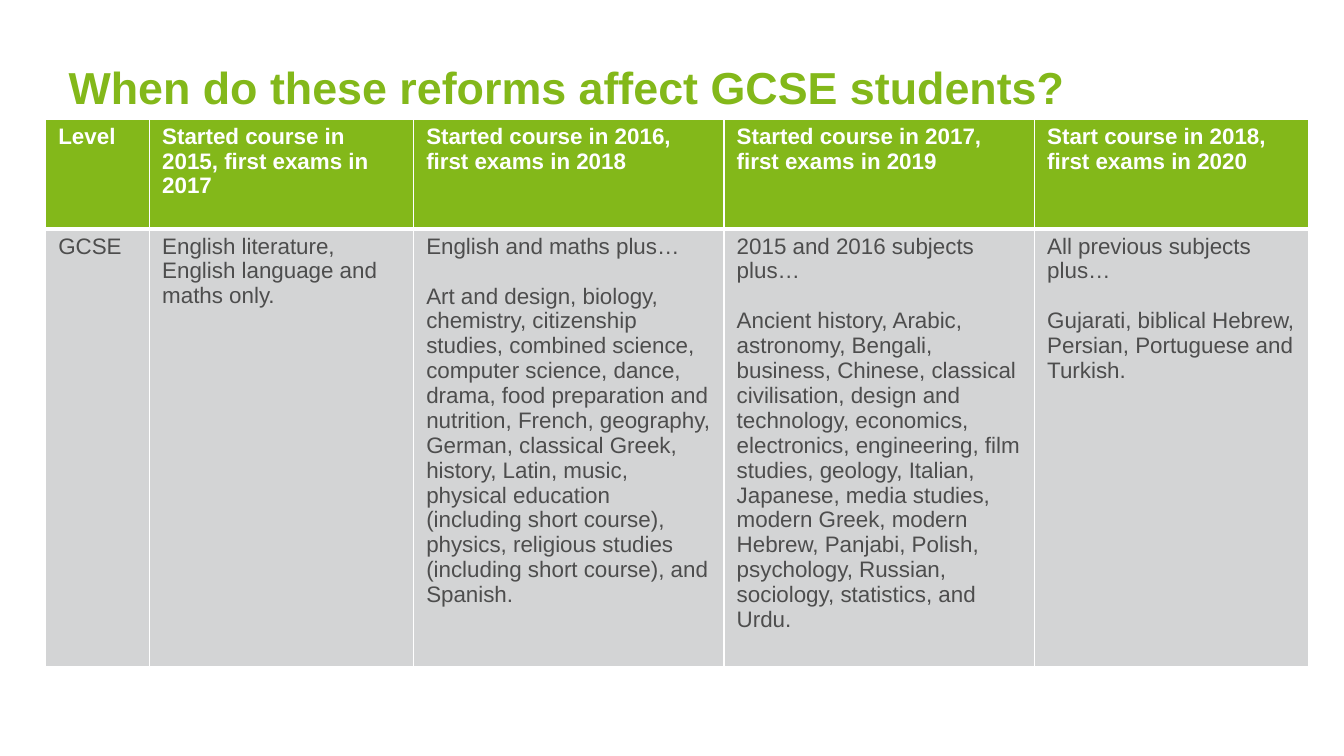
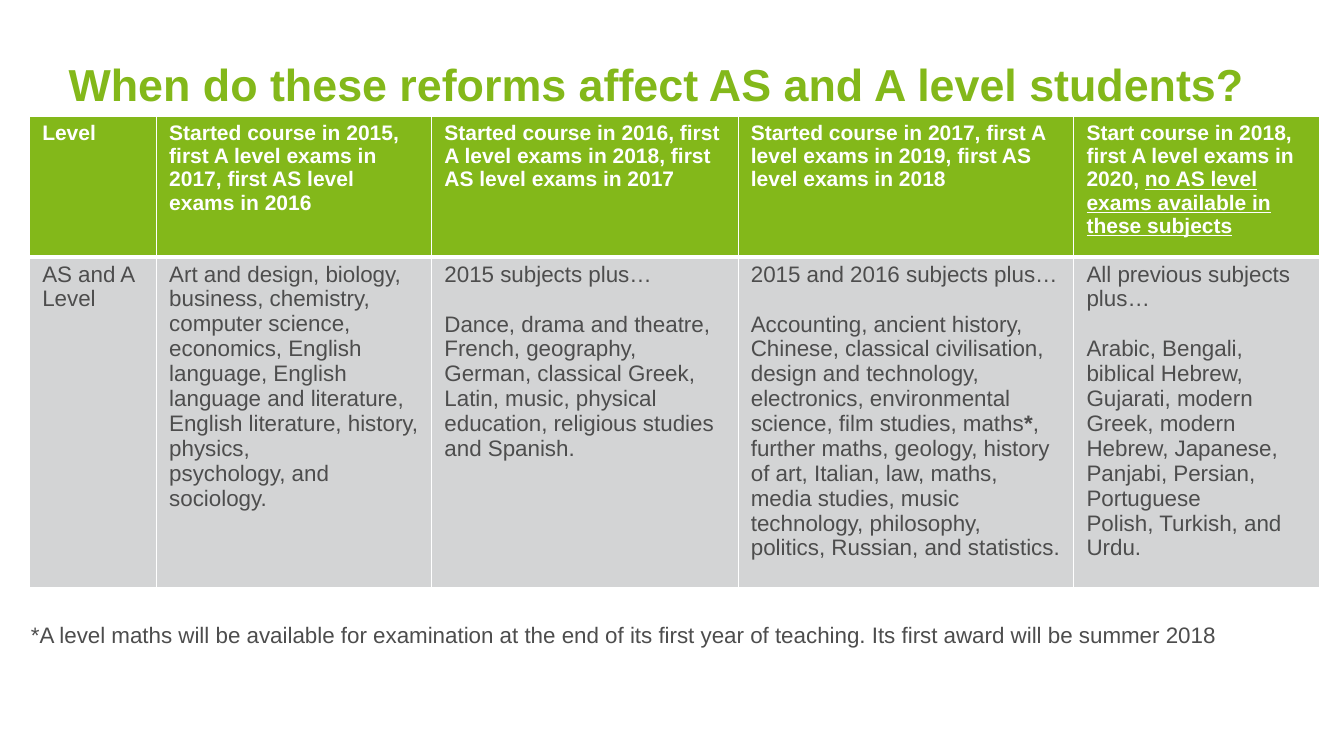
from dataclasses import dataclass

from lxml import etree
from pptx import Presentation
from pptx.dml.color import RGBColor
from pptx.enum import text
from pptx.oxml import ns
from pptx.util import Pt

COLOURS = {"green": "83B81A", "grey": "D3D4D5", "ink": "4D4D4D", "white": "FFFFFF"}
FONT = "Arial"
BODY_SIZE = 16
INTRO_GAP = 17.9  # one line between an introduction and its subjects
THIN, THICK = 1, 3


@dataclass
class Span:
    text: str
    bold: bool = False
    underline: bool = False


@dataclass
class Para:
    spans: list
    before: float = 0


def plain(*lines):
    return [Para([Span(line)]) for line in lines]


def with_intro(intro, *paras):
    first, *rest = paras
    return [*plain(intro), Para(first.spans, INTRO_GAP), *rest]


def colour(name):
    return RGBColor.from_string(COLOURS[name])


def write(frame, paras, size, ink, bold=False):
    """Fill a text frame with styled paragraphs."""
    frame.word_wrap = True
    for index, content in enumerate(paras):
        para = frame.add_paragraph() if index else frame.paragraphs[0]
        if content.before:
            para.space_before = Pt(content.before)
        for span in content.spans:
            run = para.add_run()
            run.text = span.text
            run.font.name = FONT
            run.font.size = Pt(size)
            run.font.bold = bold or span.bold
            run.font.underline = span.underline
            run.font.color.rgb = colour(ink)


def set_margins(target, side, edge):
    target.margin_left = target.margin_right = Pt(side)
    target.margin_top = target.margin_bottom = Pt(edge)


def add_text(page, left, top, width, height, content, size, ink, bold=False):
    box = page.shapes.add_textbox(Pt(left), Pt(top), Pt(width), Pt(height))
    write(box.text_frame, plain(content), size, ink, bold)
    return box.text_frame


def add_title(page, top, width, height, content):
    frame = add_text(page, 49, top, width, height, content, 32, "green", True)
    set_margins(frame, 0, 3)
    frame.vertical_anchor = text.MSO_ANCHOR.MIDDLE
    frame.paragraphs[0].line_spacing = 0.9


def set_borders(cell, top, bottom):
    properties = cell._tc.get_or_add_tcPr()
    for side, width in (("L", THIN), ("R", THIN), ("T", top), ("B", bottom)):
        line = etree.SubElement(properties, ns.qn(f"a:ln{side}"), w=str(Pt(width)))
        fill = etree.SubElement(line, ns.qn("a:solidFill"))
        etree.SubElement(fill, ns.qn("a:srgbClr"), val=COLOURS["white"])


def add_reform_table(page, left, top, widths, heights, header, body, header_size):
    """Draw a green header row above a grey row of subjects."""
    frame = page.shapes.add_table(2, len(widths), Pt(left), Pt(top),
                                  Pt(sum(widths)), Pt(sum(heights)))
    table = frame.table
    table.horz_banding = False
    for column, width in zip(table.columns, widths):
        column.width = Pt(width)
    for row, height in zip(table.rows, heights):
        row.height = Pt(height)

    styles = (
        (header, header_size, "white", True, "green", THIN, THICK),
        (body, BODY_SIZE, "ink", False, "grey", THICK, THIN),
    )
    for row, (contents, size, ink, bold, fill, above, below) in zip(table.rows, styles):
        for cell, paras in zip(row.cells, contents):
            set_margins(cell, 9.1, 3.6)
            set_borders(cell, above, below)
            cell.fill.solid()
            cell.fill.fore_color.rgb = colour(fill)
            write(cell.text_frame, paras, size, ink, bold)


def build_gcse(page):
    add_title(page, 39, 844, 51, "When do these reforms affect GCSE students?")
    header = [
        plain("Level"),
        plain("Started course in 2015, first exams in 2017"),
        plain("Started course in 2016, first exams in 2018"),
        plain("Started course in 2017, first exams in 2019"),
        plain("Start course in 2018, first exams in 2020"),
    ]
    body = [
        plain("GCSE"),
        plain("English literature, English language and maths only."),
        with_intro("English and maths plus…", *plain(
            "Art and design, biology, chemistry, citizenship studies, combined science, "
            "computer science, dance, drama, food preparation and nutrition, French, "
            "geography, German, classical Greek, history, Latin, music, physical education "
            "(including short course), physics, religious studies (including short course), "
            "and Spanish.")),
        with_intro("2015 and 2016 subjects plus…", *plain(
            "Ancient history, Arabic, astronomy, Bengali, business, Chinese, classical "
            "civilisation, design and technology, economics, electronics, engineering, film "
            "studies, geology, Italian, Japanese, media studies, modern Greek, modern Hebrew, "
            "Panjabi, Polish, psychology, Russian, sociology, statistics, and Urdu.")),
        with_intro("All previous subjects plus…", *plain(
            "Gujarati, biblical Hebrew, Persian, Portuguese and Turkish.")),
    ]
    add_reform_table(page, 32.6, 85, (74.2, 188.6, 221.8, 221.8, 195.8), (78.5, 272),
                     header, body, 16)


def build_a_level(page):
    add_title(page, 35.3, 879, 53.3, "When do these reforms affect AS and A level students?")
    header = [
        plain("Level"),
        plain("Started course in 2015, first A level exams in 2017, "
              "first AS level exams in 2016"),
        plain("Started course in 2016, first A level exams in 2018, "
              "first AS level exams in 2017"),
        plain("Started course in 2017, first A level exams in 2019, "
              "first AS level exams in 2018"),
        [Para([Span("Start course in 2018, first A level exams in 2020, "),
               Span("no AS level exams available in these subjects", underline=True)])],
    ]
    body = [
        plain("AS and A Level"),
        plain("Art and design, biology, business, chemistry, computer science, economics, "
              "English language, English language and literature, English literature, "
              "history, physics,",
              "psychology, and sociology."),
        with_intro("2015 subjects plus…", *plain(
            "Dance, drama and theatre, French, geography, German, classical Greek, Latin, "
            "music, physical education, religious studies and Spanish.")),
        with_intro("2015 and 2016 subjects plus…", Para([
            Span("Accounting, ancient history, Chinese, classical civilisation, design and "
                 "technology, electronics, environmental science, film studies, maths"),
            Span("*", bold=True),
            Span(", further maths, geology, history of art, Italian, law, maths, media "
                 "studies, music technology, philosophy, politics, Russian, and statistics."),
        ])),
        with_intro("All previous subjects plus…", *plain(
            "Arabic, Bengali, biblical Hebrew, Gujarati, modern Greek, modern Hebrew, "
            "Japanese, Panjabi, Persian, Portuguese",
            "Polish, Turkish, and Urdu.")),
    ]
    add_reform_table(page, 21.1, 83, (90.7, 196.6, 218.9, 239.8, 175.7), (100.5, 224),
                     header, body, 15)
    # Footnote
    add_text(page, 15, 440, 919, 26.6,
             "*A level maths will be available for examination at the end of its first year "
             "of teaching. Its first award will be summer 2018", BODY_SIZE, "ink")


def main():
    deck = Presentation()
    deck.slide_width, deck.slide_height = Pt(960), Pt(540)
    for build in (build_gcse, build_a_level):
        build(deck.slides.add_slide(deck.slide_layouts[6]))
    deck.save("out.pptx")


if __name__ == "__main__":
    main()
